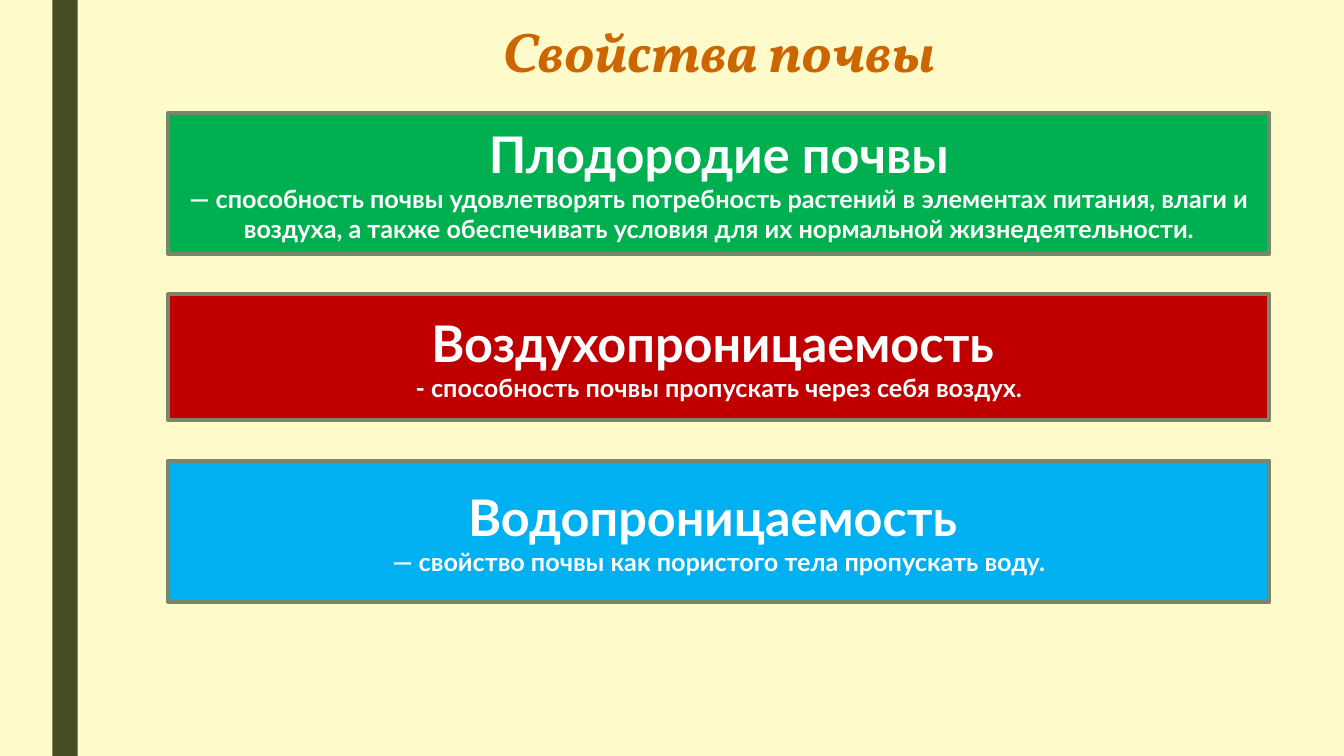
from pptx import Presentation
from pptx.dml.color import RGBColor
from pptx.enum.shapes import MSO_SHAPE
from pptx.enum.text import MSO_ANCHOR, PP_ALIGN
from pptx.util import Inches, Pt

# Heading, definition, fill colour, height in inches
PROPERTIES = [
    ("Плодородие почвы",
     "— способность почвы удовлетворять потребность растений в элементах питания, "
     "влаги и воздуха, а также обеспечивать условия для их нормальной "
     "жизнедеятельности.",
     "00B050", 1.4),
    ("Воздухопроницаемость ",
     "- способность почвы пропускать через себя воздух.",
     "C00000", 1.25),
    ("Водопроницаемость ",
     "— свойство почвы как пористого тела пропускать воду.",
     "00B0F0", 1.4),
]
CARDS_TOP = 1.12
CARD_GAP = 0.4


def color(value):
    return RGBColor.from_string(value)


def add_span(para, text, size, font, text_color, italic=False):
    para.alignment = PP_ALIGN.CENTER
    span = para.add_run()
    span.text = text
    span.font.size = Pt(size)
    span.font.name = font
    span.font.bold = True
    span.font.italic = italic
    span.font.color.rgb = color(text_color)


def add_rectangle(page, left, top, width, height, fill):
    box = page.shapes.add_shape(MSO_SHAPE.RECTANGLE, Inches(left), Inches(top),
                                Inches(width), Inches(height))
    box.shadow.inherit = False
    box.fill.solid()
    box.fill.fore_color.rgb = color(fill)
    box.line.fill.background()
    return box


def add_title(page, text):
    box = page.shapes.add_textbox(Inches(1.88), Inches(0.2), Inches(10.5), Inches(1.62))
    frame = box.text_frame
    frame.word_wrap = True
    frame.vertical_anchor = MSO_ANCHOR.TOP
    para = frame.paragraphs[0]
    para.line_spacing = 0.89
    add_span(para, text, 40, "Vollkorn", "CC6600", italic=True)


def add_property_card(page, top, height, heading, definition, fill):
    box = add_rectangle(page, 1.67, top, 10.92, height, fill)
    box.line.color.rgb = color("7A866C")
    box.line.width = Pt(2.75)
    frame = box.text_frame
    frame.word_wrap = True
    frame.vertical_anchor = MSO_ANCHOR.MIDDLE
    add_span(frame.paragraphs[0], heading, 36, "Lato", "FFFFFF")
    add_span(frame.add_paragraph(), definition, 18, "Lato", "FFFFFF")


def main():
    deck = Presentation()
    deck.slide_width = Inches(13.33)
    deck.slide_height = Inches(7.5)
    page = deck.slides.add_slide(deck.slide_layouts[6])
    page.background.fill.solid()
    page.background.fill.fore_color.rgb = color("FEFAC9")

    add_rectangle(page, 0.52, 0, 0.25, 7.5, "444D26")
    add_title(page, "Свойства почвы")
    top = CARDS_TOP
    for heading, definition, fill, height in PROPERTIES:
        add_property_card(page, top, height, heading, definition, fill)
        top += height + CARD_GAP

    deck.save("out.pptx")


if __name__ == "__main__":
    main()
